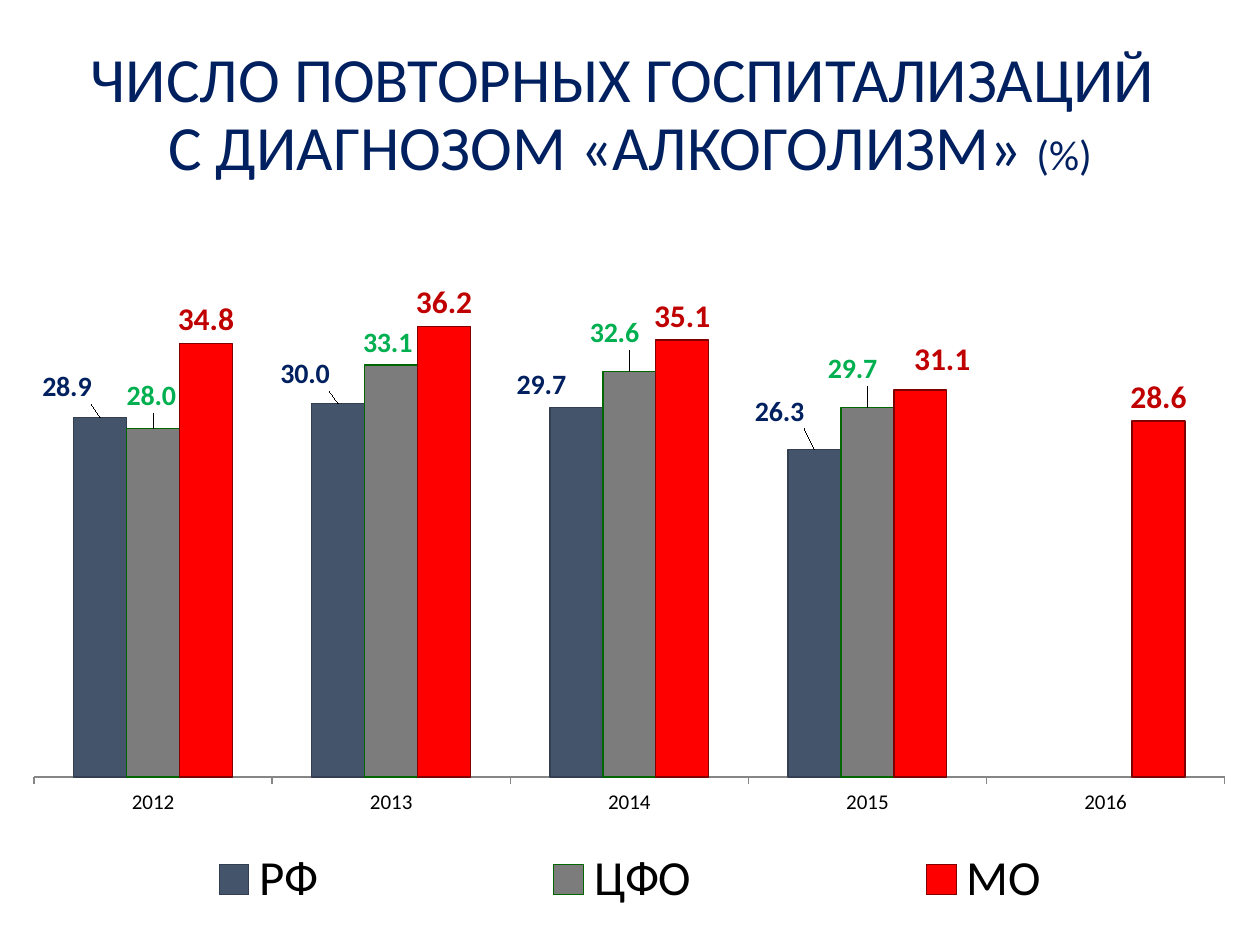
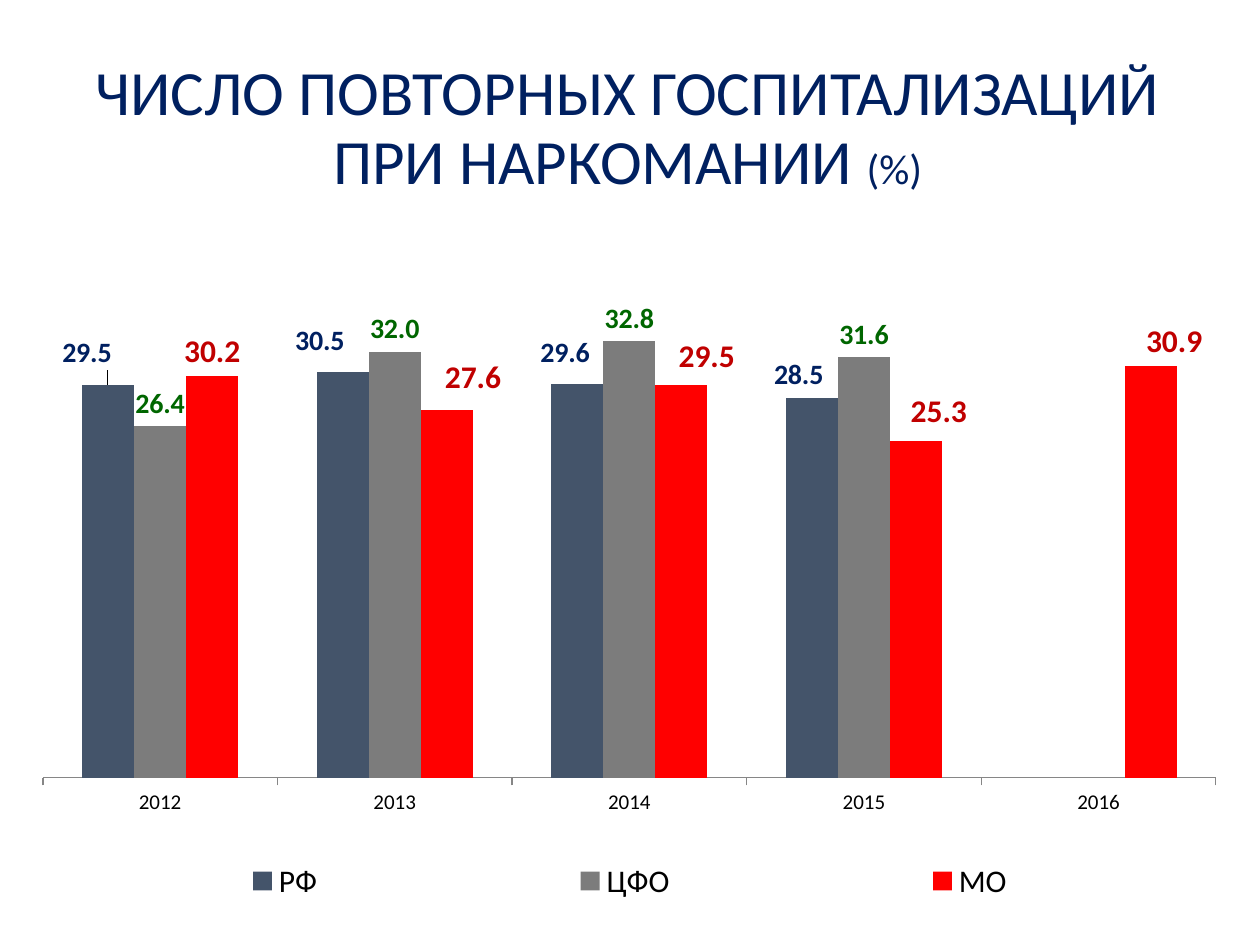
from dataclasses import dataclass, field

import pptx
import pptx.chart.data
import pptx.dml.color
import pptx.enum.chart
import pptx.enum.text
import pptx.oxml
import pptx.oxml.ns
import pptx.util

Pt = pptx.util.Pt


def rgb(code):
    return pptx.dml.color.RGBColor.from_string(code)


@dataclass(frozen=True)
class Theme:
    font: str = "Calibri"
    navy: str = "002060"
    black: str = "000000"
    axis_line: str = "868686"
    title_size: int = 36
    unit_size: int = 24
    chart_size: int = 18
    year_size: int = 12
    region_label_size: int = 16
    value_format: str = "0.0"
    fills: dict = field(default_factory=lambda: {
        "РФ": "44546A", "ЦФО": "7C7C7C", "МО": "FF0000"})


THEME = Theme()
YEARS = ["2012", "2013", "2014", "2015", "2016"]
LEGEND_AREA = {"x": 0, "y": 0.85, "w": 1, "h": 0.12}


@dataclass
class Region:
    name: str
    shares: list
    label_color: str
    label_size: int = THEME.region_label_size
    outline: str = ""
    nudges: dict = field(default_factory=dict)


def style_font(font, size, color, bold=False):
    font.name = THEME.font
    font.size = Pt(size)
    font.bold = bold
    font.color.rgb = rgb(color)


def chart_xml(content):
    return pptx.oxml.parse_xml(content.replace(
        ">", f' {pptx.oxml.ns.nsdecls("c")}>', 1))


def layout_xml(area, target="", mode="edge"):
    tags = f'<c:layoutTarget val="{target}"/>' if target else ""
    if mode == "edge":
        tags += '<c:xMode val="edge"/><c:yMode val="edge"/>'
    tags += "".join(f'<c:{key} val="{value}"/>' for key, value in area.items())
    return chart_xml(f"<c:layout><c:manualLayout>{tags}</c:manualLayout></c:layout>")


def replace_layout(parent, index, layout):
    for previous in parent.xpath("c:layout"):
        parent.remove(previous)
    parent.insert(index, layout)


def add_title(slide, lines, left, top, height):
    title = slide.shapes.title
    title.left, title.top, title.width, title.height = (
        Pt(left), Pt(top), Pt(720), Pt(height))
    frame = title.text_frame
    frame.word_wrap = True
    frame.auto_size = pptx.enum.text.MSO_AUTO_SIZE.NONE
    frame.vertical_anchor = pptx.enum.text.MSO_ANCHOR.MIDDLE
    heading = frame.paragraphs[0]
    heading.alignment = pptx.enum.text.PP_ALIGN.CENTER
    heading.line_spacing = 0.9
    pieces = [(lines[0], THEME.title_size), (lines[1], THEME.title_size),
              ("(%)", THEME.unit_size)]
    for index, (words, size) in enumerate(pieces):
        if index == 1:
            heading.add_line_break()
        run = heading.add_run()
        run.text = words
        style_font(run.font, size, THEME.navy)


def style_axes(chart, top_share):
    years = chart.category_axis
    years.has_major_gridlines = False
    years.major_tick_mark = pptx.enum.chart.XL_TICK_MARK.OUTSIDE
    years.format.line.color.rgb = rgb(THEME.axis_line)
    style_font(years.tick_labels.font, THEME.year_size, THEME.black)
    shares = chart.value_axis
    shares.minimum_scale = 0
    shares.maximum_scale = top_share
    shares.has_major_gridlines = False
    shares.visible = False
    shares.tick_labels.number_format = THEME.value_format
    shares.tick_labels.number_format_is_linked = False


def style_region(bars, region):
    bars.format.fill.solid()
    bars.format.fill.fore_color.rgb = rgb(THEME.fills[region.name])
    bars.invert_if_negative = False
    if region.outline:
        bars.format.line.color.rgb = rgb(region.outline)
        bars.format.line.width = Pt(0.75)
    else:
        bars.format.line.fill.background()
    labels = bars.data_labels
    labels.show_value = True
    labels.number_format = THEME.value_format
    labels.number_format_is_linked = False
    labels.position = pptx.enum.chart.XL_LABEL_POSITION.OUTSIDE_END
    style_font(labels.font, region.label_size, region.label_color, True)


def nudge_labels(bars, bars_xml, region, chart_height):
    for year, (right, down) in region.nudges.items():
        label = bars.points[year].data_label
        label.position = pptx.enum.chart.XL_LABEL_POSITION.OUTSIDE_END
        style_font(label.font, region.label_size, region.label_color, True)
        index = bars_xml.xpath(f"c:dLbls/c:dLbl/c:idx[@val='{year}']")[0]
        shift = {"x": round(right / 720, 4), "y": round(down / chart_height, 4)}
        index.addnext(chart_xml(
            f'<c:numFmt formatCode="{THEME.value_format}" sourceLinked="0"/>'.replace(
                "/>", "></c:numFmt>")))
        index.addnext(layout_xml(shift, mode="factor"))


def add_region_chart(slide, regions, top, height, plot_area, top_share, legend_size):
    figures = pptx.chart.data.CategoryChartData(number_format=THEME.value_format)
    figures.categories = YEARS
    for region in regions:
        figures.add_series(region.name, region.shares)
    chart = slide.shapes.add_chart(
        pptx.enum.chart.XL_CHART_TYPE.COLUMN_CLUSTERED,
        0, Pt(top), Pt(720), Pt(height), figures).chart
    chart.has_title = False
    style_font(chart.font, THEME.chart_size, THEME.black)
    style_axes(chart, top_share)
    columns = chart.plots[0]
    columns.gap_width = 150
    columns.overlap = 0
    columns.vary_by_categories = False
    all_bars_xml = chart.element.xpath(".//c:ser")
    for bars, bars_xml, region in zip(columns.series, all_bars_xml, regions):
        style_region(bars, region)
        nudge_labels(bars, bars_xml, region, height)
    chart.has_legend = True
    chart.legend.position = pptx.enum.chart.XL_LEGEND_POSITION.BOTTOM
    chart.legend.include_in_layout = False
    style_font(chart.legend.font, legend_size, THEME.black)
    replace_layout(chart.element.xpath("c:chart/c:plotArea")[0], 0,
                   layout_xml(plot_area, target="inner"))
    replace_layout(chart.element.xpath("c:chart/c:legend")[0], 1,
                   layout_xml(LEGEND_AREA))


def add_alcoholism_slide(deck):
    slide = deck.slides.add_slide(deck.slide_layouts[5])
    add_title(slide, ["ЧИСЛО ПОВТОРНЫХ ГОСПИТАЛИЗАЦИЙ ", "С ДИАГНОЗОМ «АЛКОГОЛИЗМ» "],
              0, 20.9, 90.7)
    regions = [
        Region("РФ", [28.9, 30, 29.7, 26.3, None], THEME.navy, outline="333F50",
               nudges={0: (-19, -4.5), 1: (-19, -4), 2: (-20, 0), 3: (-20, -9)}),
        Region("ЦФО", [28, 33.1, 32.6, 29.7, None], "00B050", outline="006600",
               nudges={0: (-1, -6), 1: (-2, 0), 2: (-8.5, -9), 3: (-8.5, -9)}),
        Region("МО", [34.8, 36.2, 35.1, 31.1, 28.6], "C00000", THEME.chart_size,
               "800000", {3: (12.5, -3.5)}),
    ]
    plot_area = {"x": 0.027, "y": 0.084, "w": 0.945, "h": 0.685}
    add_region_chart(slide, regions, 124.6, 415.4, plot_area, 40, 28)


def add_drug_addiction_slide(deck):
    slide = deck.slides.add_slide(deck.slide_layouts[5])
    add_title(slide, ["ЧИСЛО ПОВТОРНЫХ ГОСПИТАЛИЗАЦИЙ", "ПРИ НАРКОМАНИИ "],
              -1.4, 37.4, 73.4)
    regions = [
        Region("РФ", [29.5, 30.5, 29.6, 28.5, None], THEME.navy,
               nudges={0: (-12, -5.5), 1: (-13, -4.5), 2: (-7, -4.5), 3: (-7.5, -0.5)}),
        Region("ЦФО", [26.4, 32, 32.8, 31.6, None], "006600"),
        Region("МО", [30.2, 27.6, 29.5, 25.3, 30.9], "C00000", THEME.chart_size,
               nudges={1: (15, -5), 2: (14.5, -2.5), 3: (13, -3.5), 4: (13.5, -0.5)}),
    ]
    plot_area = {"x": 0.034, "y": 0.109, "w": 0.931, "h": 0.656}
    add_region_chart(slide, regions, 133.9, 406.1, plot_area, 35, THEME.chart_size)


def main():
    deck = pptx.Presentation()
    deck.slide_width, deck.slide_height = Pt(720), Pt(540)
    add_alcoholism_slide(deck)
    add_drug_addiction_slide(deck)
    deck.save("out.pptx")


if __name__ == "__main__":
    main()
